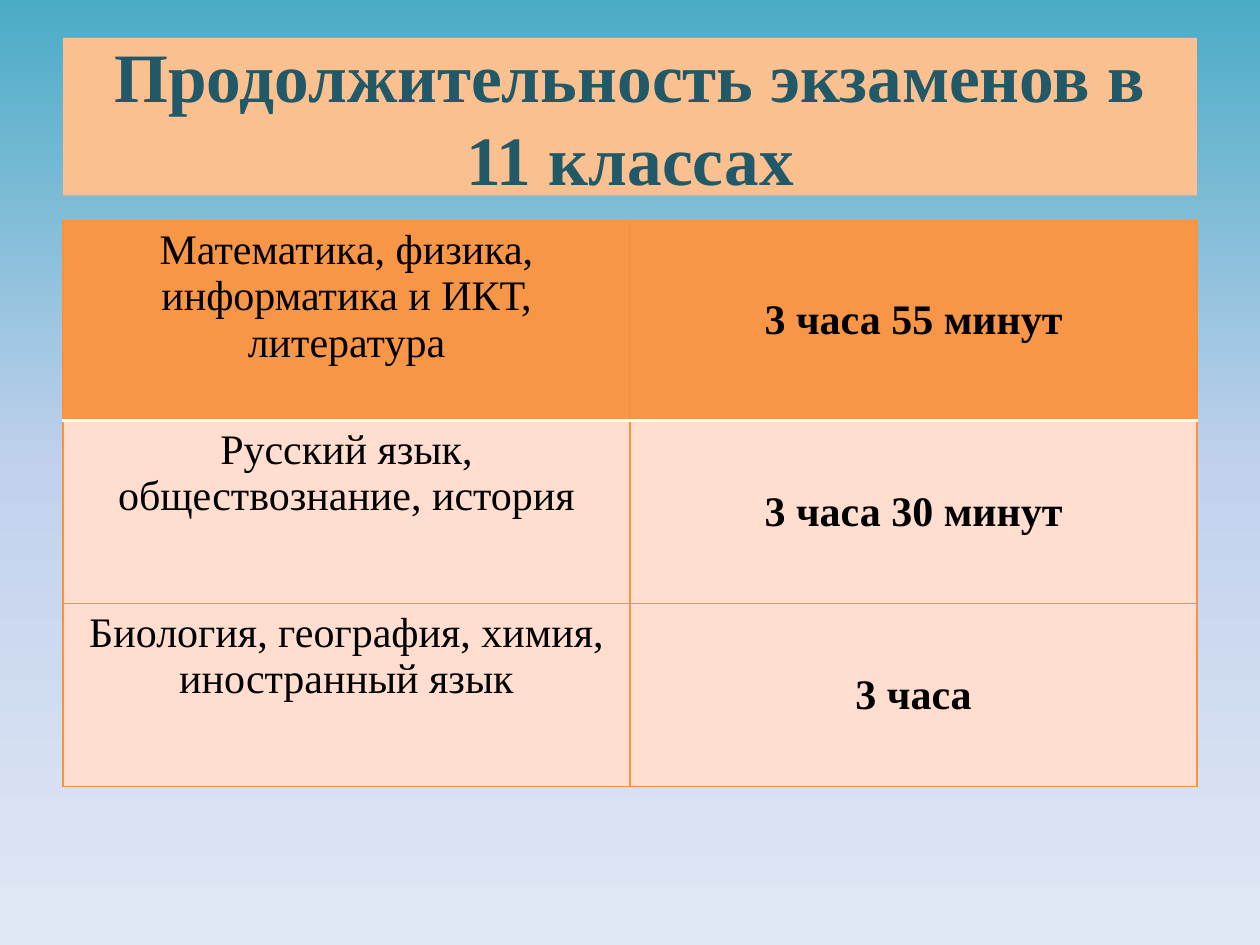
"""Build the slide listing exam durations for grade 11."""
from typing import NamedTuple

from lxml import etree
from pptx import Presentation
from pptx.dml.color import RGBColor
from pptx.enum.text import MSO_ANCHOR, MSO_AUTO_SIZE, PP_ALIGN
from pptx.oxml import parse_xml
from pptx.oxml.ns import nsdecls, qn
from pptx.util import Inches, Pt

CENTER = PP_ALIGN.CENTER
TOP = MSO_ANCHOR.TOP
MIDDLE = MSO_ANCHOR.MIDDLE
NO_AUTOFIT = MSO_AUTO_SIZE.NONE

FONT = "Times New Roman"
BLACK = RGBColor(0x00, 0x00, 0x00)
WHITE = RGBColor(0xFF, 0xFF, 0xFF)
TEAL = RGBColor(0x21, 0x59, 0x68)
PEACH = RGBColor(0xFA, 0xC0, 0x90)
ORANGE = RGBColor(0xF7, 0x96, 0x46)
BORDER_ORANGE = RGBColor(0xF6, 0x92, 0x40)
PALE_PEACH = RGBColor(0xFF, 0xDE, 0xD0)
SKY = RGBColor(0x4B, 0xAC, 0xC6)
LAVENDER = RGBColor(0xC2, 0xD1, 0xED)
MIST = RGBColor(0xE1, 0xE8, 0xF5)

LEFT, WIDTH = 0.5, 9
COLUMN_WIDTH = WIDTH / 2


class Exam(NamedTuple):
    subjects: str
    duration: str
    height: float
    fill: RGBColor


class Border(NamedTuple):
    color: RGBColor
    width: float


EXAMS = [
    Exam("Математика, физика, информатика и ИКТ, литература", "3 часа 55 минут", 1.59, ORANGE),
    Exam("Русский язык, обществознание, история", "3 часа 30 минут", 1.45, PALE_PEACH),
    Exam("Биология, география, химия, иностранный язык", "3 часа", 1.45, PALE_PEACH),
]
THIN = Border(BORDER_ORANGE, 0.75)
HEADER_RULE = Border(WHITE, 2)


def paint_background(slide, colors: list[RGBColor]) -> None:
    """Fill the background with an even gradient from top to bottom."""
    fill = slide.background.fill
    fill.gradient()
    gradient = slide.background._cSld.find(f".//{qn('a:gradFill')}")
    stops = gradient.find(qn("a:gsLst"))
    for stop in list(stops):
        stops.remove(stop)
    for index, color in enumerate(colors):
        position = 100000 * index // (len(colors) - 1)
        stop = etree.SubElement(stops, qn("a:gs"), pos=str(position))
        etree.SubElement(stop, qn("a:srgbClr"), val=str(color))
    fill.gradient_angle = 270


def write_text(text_frame, text: str, size: float, color: RGBColor, bold: bool) -> None:
    """Write one centred run."""
    paragraph = text_frame.paragraphs[0]
    paragraph.alignment = CENTER
    run = paragraph.add_run()
    run.text = text
    run.font.name = FONT
    run.font.size = Pt(size)
    run.font.bold = bold
    run.font.color.rgb = color


def add_title(slide, text: str) -> None:
    """Place and format the title placeholder."""
    title = slide.shapes.title
    title.left, title.top = Inches(LEFT), Inches(0.3)
    title.width, title.height = Inches(WIDTH), Inches(1.25)
    geometry = parse_xml(
        f'<a:prstGeom {nsdecls("a")} prst="round2DiagRect"><a:avLst>'
        '<a:gd name="adj1" fmla="val 0"/><a:gd name="adj2" fmla="val 0"/>'
        "</a:avLst></a:prstGeom>"
    )
    title._element.spPr.insert(1, geometry)
    title.fill.solid()
    title.fill.fore_color.rgb = PEACH
    title.text_frame.auto_size = NO_AUTOFIT
    title.text_frame.word_wrap = True
    title.text_frame.vertical_anchor = MIDDLE
    write_text(title.text_frame, text, 39.6, TEAL, True)


def set_borders(cell, top: Border, bottom: Border) -> None:
    """Draw the four cell borders."""
    properties = cell._tc.get_or_add_tcPr()
    for tag, border in zip(("a:lnL", "a:lnR", "a:lnT", "a:lnB"), (THIN, THIN, top, bottom)):
        line = etree.SubElement(properties, qn(tag), w=str(Pt(border.width)))
        solid = etree.SubElement(line, qn("a:solidFill"))
        etree.SubElement(solid, qn("a:srgbClr"), val=str(border.color))


def add_exam_table(slide, exams: list[Exam]) -> None:
    """Add the table of subjects and durations."""
    height = sum(exam.height for exam in exams)
    table = slide.shapes.add_table(
        len(exams), 2, Inches(LEFT), Inches(1.75), Inches(WIDTH), Inches(height)
    ).table
    table.horz_banding = False
    for column in table.columns:
        column.width = Inches(COLUMN_WIDTH)
    for index, exam in enumerate(exams):
        table.rows[index].height = Inches(exam.height)
        top = HEADER_RULE if index == 1 else THIN
        bottom = HEADER_RULE if index == 0 else THIN
        contents = ((exam.subjects, TOP, False), (exam.duration, MIDDLE, True))
        for column_index, (text, anchor, bold) in enumerate(contents):
            cell = table.cell(index, column_index)
            set_borders(cell, top, bottom)
            cell.fill.solid()
            cell.fill.fore_color.rgb = exam.fill
            cell.vertical_anchor = anchor
            write_text(cell.text_frame, text, 24, BLACK, bold)


def main() -> None:
    """Create and save the presentation."""
    presentation = Presentation()
    presentation.slide_width, presentation.slide_height = Inches(10), Inches(7.5)
    slide = presentation.slides.add_slide(presentation.slide_layouts[5])
    paint_background(slide, [SKY, LAVENDER, MIST])
    add_title(slide, "Продолжительность экзаменов в 11 классах")
    add_exam_table(slide, EXAMS)
    presentation.save("out.pptx")


if __name__ == "__main__":
    main()
